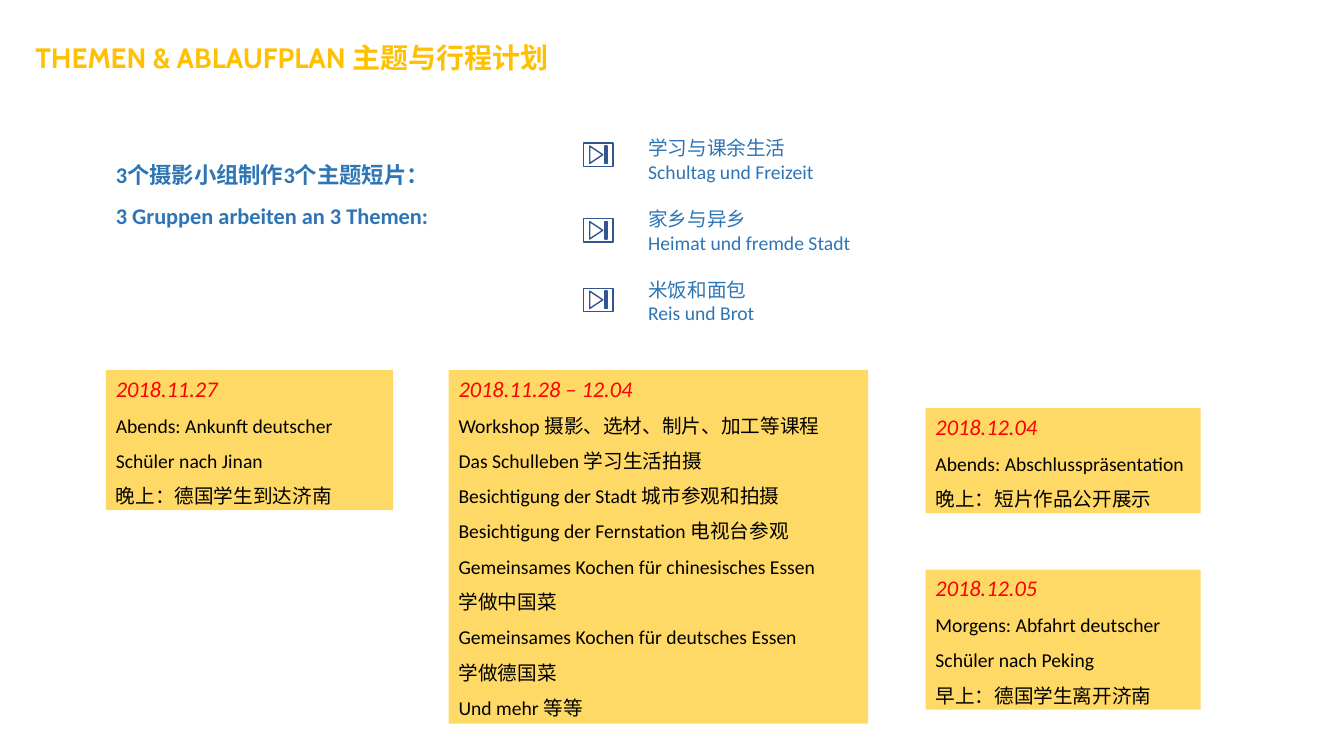
from pptx import Presentation
from pptx.dml.color import RGBColor
from pptx.enum.shapes import MSO_SHAPE
from pptx.enum.text import MSO_ANCHOR, MSO_AUTO_SIZE, PP_ALIGN
from pptx.util import Inches, Pt

GOLD = RGBColor(0xFF, 0xC0, 0x00)
SAND = RGBColor(0xFF, 0xD9, 0x66)
RED = RGBColor(0xFF, 0x00, 0x00)
BLACK = RGBColor(0x00, 0x00, 0x00)
BLUE = RGBColor(0x2E, 0x75, 0xB6)
NAVY = RGBColor(0x32, 0x54, 0x91)

TOPICS = [
    ("学习与课余生活", "Schultag und Freizeit"),
    ("家乡与异乡", "Heimat und fremde Stadt"),
    ("米饭和面包", "Reis und Brot"),
]
SCHEDULE = [
    ((1.05, 3.67, 2.85, 1.39), "2018.11.27", [
        "Abends: Ankunft deutscher Schüler nach Jinan",
        "晚上：德国学生到达济南",
    ]),
    ((4.45, 3.67, 4.16, 3.51), "2018.11.28 – 12.04", [
        "Workshop 摄影、选材、制片、加工等课程",
        "Das Schulleben 学习生活拍摄",
        "Besichtigung der Stadt 城市参观和拍摄",
        "Besichtigung der Fernstation 电视台参观",
        "Gemeinsames Kochen für chinesisches Essen",
        "学做中国菜",
        "Gemeinsames Kochen für deutsches Essen",
        "学做德国菜",
        "Und mehr 等等",
    ]),
    ((9.18, 4.05, 2.73, 1.04), "2018.12.04", [
        "Abends: Abschlusspräsentation",
        "晚上：短片作品公开展示",
    ]),
    ((9.18, 5.65, 2.73, 1.39), "2018.12.05", [
        "Morgens: Abfahrt deutscher Schüler nach Peking",
        "早上：德国学生离开济南",
    ]),
]


class PlanSlide:
    body_font = "Calibri"
    title_font = "Cabin"

    def __init__(self, deck):
        self.page = deck.slides.add_slide(deck.slide_layouts[5])

    def frame(self, box, lines, anchor=MSO_ANCHOR.TOP):
        frame = box.text_frame
        frame.text = "\n".join(lines)
        frame.word_wrap = True
        frame.auto_size = MSO_AUTO_SIZE.SHAPE_TO_FIT_TEXT
        frame.vertical_anchor = anchor
        return frame.paragraphs

    def style(self, para, size, color, font=None, bold=False, italic=False, spacing=1.0):
        para.alignment = PP_ALIGN.LEFT
        para.line_spacing = spacing
        for span in para.runs:
            span.font.name = font or self.body_font
            span.font.size = Pt(size)
            span.font.color.rgb = color
            span.font.bold = bold
            span.font.italic = italic

    def title(self, text, area):
        box = self.page.shapes.title
        box.left, box.top, box.width, box.height = map(Inches, area)
        para = self.frame(box, [text], MSO_ANCHOR.MIDDLE)[0]
        para.space_after = Pt(6)
        self.style(para, 20, GOLD, font=self.title_font, bold=True)

    def text(self, lines, area, size, bold=False, spacing=1.0):
        box = self.page.shapes.add_textbox(*map(Inches, area))
        paras = self.frame(box, lines)
        for para in paras:
            self.style(para, size, BLUE, bold=bold, spacing=spacing)
        return paras

    def topics(self, pairs, area):
        paras = self.text([line for pair in pairs for line in pair], area, 14)
        for para in paras[2::2]:
            para.space_before = Pt(17)

    def shape(self, kind, area):
        shape = self.page.shapes.add_shape(kind, *map(Inches, area))
        shape.shadow.inherit = False
        return shape

    def card(self, area, date, lines):
        box = self.shape(MSO_SHAPE.RECTANGLE, area)
        box.fill.solid()
        box.fill.fore_color.rgb = SAND
        box.line.fill.background()
        heading, *entries = self.frame(box, [date, *lines])
        self.style(heading, 16, RED, italic=True)
        for para in entries:
            self.style(para, 14, BLACK, spacing=1.5)

    def play_button(self, top):
        button = self.shape(MSO_SHAPE.ACTION_BUTTON_END, (5.79, top, 0.29, 0.23))
        button.fill.background()
        button.line.color.rgb = NAVY
        button.line.width = Pt(1)


def main():
    deck = Presentation()
    deck.slide_width, deck.slide_height = Inches(13.33), Inches(7.5)
    plan = PlanSlide(deck)
    plan.title("THEMEN & ABLAUFPLAN 主题与行程计划", (0.25, 0.35, 6.42, 0.44))
    plan.text(
        ["3个摄影小组制作3个主题短片：", "3 Gruppen arbeiten an 3 Themen:"],
        (1.05, 1.42, 3.84, 0.87), 16, bold=True, spacing=1.5,
    )
    plan.topics(TOPICS, (6.33, 1.3, 5.08, 1.99))
    for top in (1.42, 2.17, 2.86):
        plan.play_button(top)
    for area, date, lines in SCHEDULE:
        plan.card(area, date, lines)
    deck.save("out.pptx")


if __name__ == "__main__":
    main()
